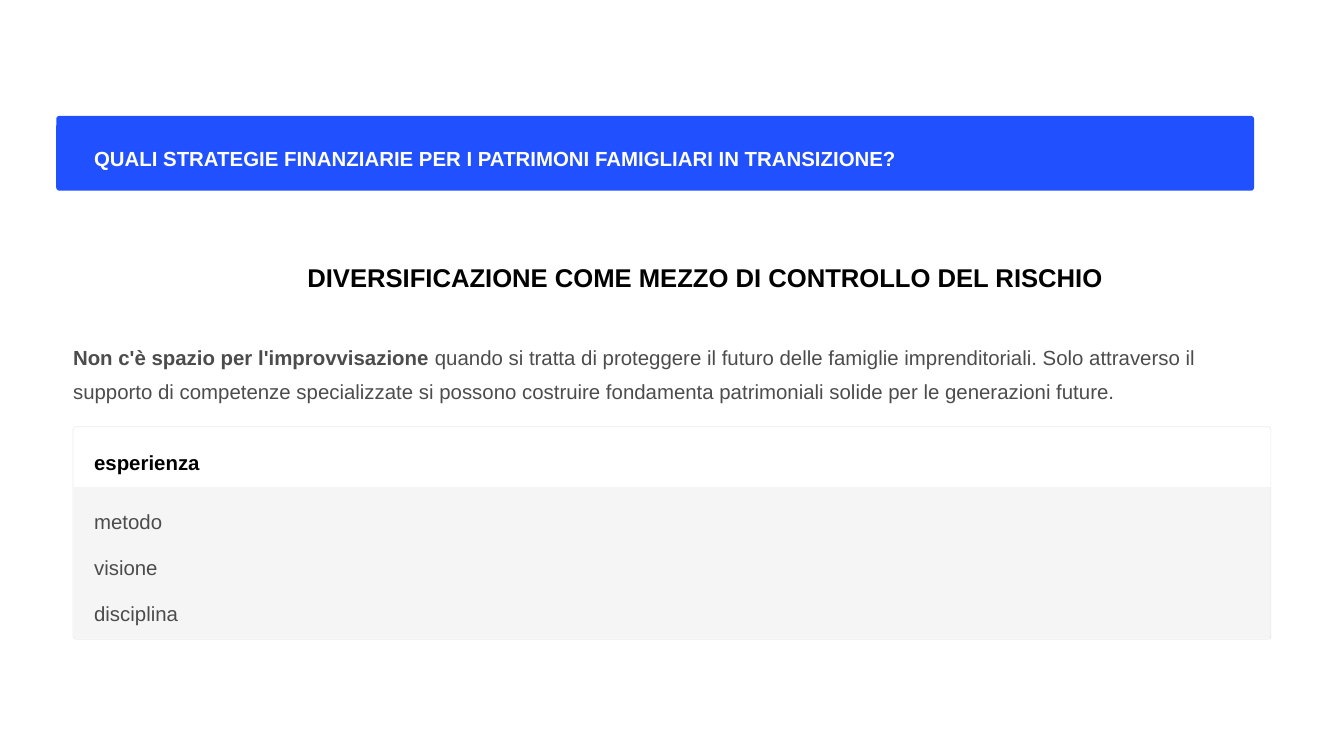
from lxml import etree
from pptx import Presentation
from pptx.dml.color import RGBColor
from pptx.enum.shapes import MSO_SHAPE as Shape
from pptx.oxml.ns import qn
from pptx.util import Inches, Pt

BLUE = RGBColor(0x21, 0x50, 0xFE)
WHITE = RGBColor(0xFF, 0xFF, 0xFF)
BLACK = RGBColor(0x00, 0x00, 0x00)
GREY = RGBColor(0x4C, 0x4C, 0x4D)

QUESTION = "QUALI STRATEGIE FINANZIARIE PER I PATRIMONI FAMIGLIARI IN TRANSIZIONE?"
HEADING = "DIVERSIFICAZIONE COME MEZZO DI CONTROLLO DEL RISCHIO"
INTRO_LEAD = "Non c'è spazio per l'improvvisazione"
INTRO_REST = (
    " quando si tratta di proteggere il futuro delle famiglie imprenditoriali. "
    "Solo attraverso il supporto di competenze specializzate si possono costruire "
    "fondamenta patrimoniali solide per le generazioni future."
)
LIST_TITLE = "esperienza"
LIST_ITEMS = ["metodo", "visione", "disciplina"]

BODY = {"size": Pt(17.5), "name": "Arial", "bold": False}
BOLD = {**BODY, "bold": True}
HEADING_FORMAT = {**BOLD, "size": Pt(22)}

CONTENT_WIDTH = 14.26
TABLE_LEFT, TABLE_TOP, TABLE_HEIGHT = 0.87, 5.08, 2.53
BORDER = 0.01
HEADER_HEIGHT = 0.71
TEXT_LEFT, TEXT_OFFSET, ITEM_PITCH = 1.12, 0.16, 0.545


def set_opacity(color_format, percent):
    """Make a solid fill partly transparent."""
    color = color_format._xPr.find(qn("a:solidFill"))[0]
    etree.SubElement(color, qn("a:alpha"), val=str(percent * 1000))


def add_panel(slide, kind, box, color=None, opacity=100, corner=None):
    panel = slide.shapes.add_shape(kind, *map(Inches, box))
    panel.shadow.inherit = False
    panel.line.fill.background()
    if corner is not None:
        panel.adjustments[0] = corner
    if color is None:
        panel.fill.background()
    else:
        panel.fill.solid()
        panel.fill.fore_color.rgb = color
        if opacity < 100:
            set_opacity(panel.fill, opacity)
    return panel


def add_text(slide, box, runs, color, line_spacing=28.5):
    """Add one paragraph made of (text, format) runs."""
    frame = slide.shapes.add_textbox(*map(Inches, box)).text_frame
    frame.word_wrap = True
    for side in ("left", "top", "right", "bottom"):
        setattr(frame, f"margin_{side}", 0)
    paragraph = frame.paragraphs[0]
    paragraph.line_spacing = Pt(line_spacing)
    for text, font_format in runs:
        run = paragraph.add_run()
        run.text = text
        run.font.color.rgb = color
        for attribute, value in font_format.items():
            setattr(run.font, attribute, value)


def add_list_table(slide):
    outline = add_panel(
        slide, Shape.ROUNDED_RECTANGLE,
        (TABLE_LEFT, TABLE_TOP, CONTENT_WIDTH, TABLE_HEIGHT), corner=0.015,
    )
    outline.line.width = Pt(0.6)
    outline.line.color.rgb = BLACK
    set_opacity(outline.line.fill, 8)

    left, top = TABLE_LEFT + BORDER, TABLE_TOP + BORDER
    width = CONTENT_WIDTH - BORDER
    body_top = top + HEADER_HEIGHT
    body_height = TABLE_HEIGHT - 2 * BORDER - HEADER_HEIGHT
    add_panel(slide, Shape.RECTANGLE, (left, top, width, HEADER_HEIGHT), WHITE, 4)
    add_panel(slide, Shape.RECTANGLE, (left, body_top, width, body_height), BLACK, 4)

    add_text(slide, (TEXT_LEFT, top + TEXT_OFFSET, 6.62, 0.4),
             [(LIST_TITLE, BOLD)], BLACK)
    for index, item in enumerate(LIST_ITEMS):
        item_top = body_top + TEXT_OFFSET + index * ITEM_PITCH
        add_text(slide, (TEXT_LEFT, item_top, 6.62, 0.4), [(item, BODY)], GREY)


def main():
    presentation = Presentation()
    presentation.slide_width, presentation.slide_height = Inches(16), Inches(9)
    slide = presentation.slides.add_slide(presentation.slide_layouts[6])
    slide.background.fill.solid()
    slide.background.fill.fore_color.rgb = WHITE

    add_panel(slide, Shape.ROUNDED_RECTANGLE, (0.67, 1.38, CONTENT_WIDTH, 0.89),
              BLUE, corner=0.042)
    add_text(slide, (TEXT_LEFT, 1.63, 13.77, 0.4), [(QUESTION, BOLD)], WHITE)
    add_text(slide, (3.66, 2.99, 11.46, 0.5), [(HEADING, HEADING_FORMAT)], BLACK, 35.5)
    add_text(slide, (TABLE_LEFT, 4.01, CONTENT_WIDTH, 0.79),
             [(INTRO_LEAD, BOLD), (INTRO_REST, BODY)], GREY)
    add_list_table(slide)

    presentation.save("out.pptx")


if __name__ == "__main__":
    main()
